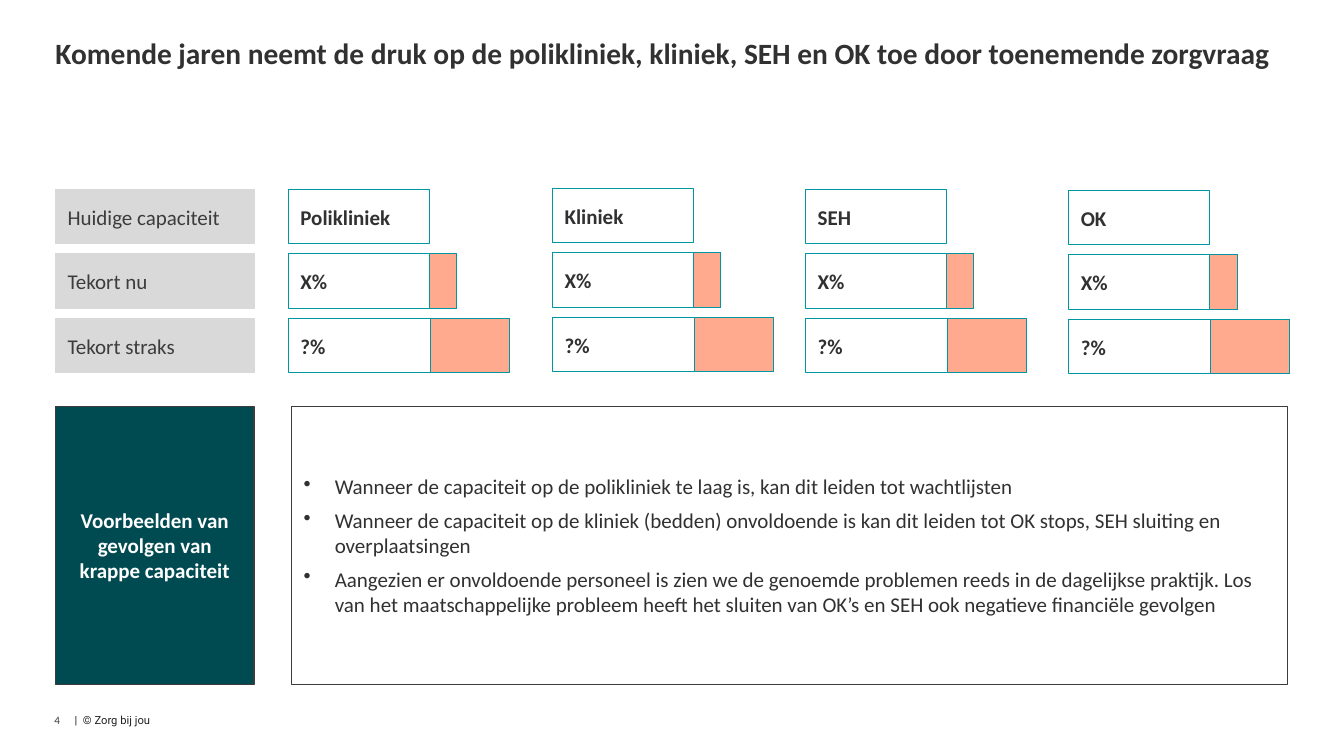
from lxml import etree
from pptx import Presentation
from pptx.dml.color import RGBColor
from pptx.enum.shapes import MSO_SHAPE
from pptx.enum.text import MSO_ANCHOR, PP_ALIGN
from pptx.oxml.ns import qn
from pptx.util import Inches, Pt

RECTANGLE = MSO_SHAPE.RECTANGLE
MIDDLE = MSO_ANCHOR.MIDDLE
LEFT, CENTER = PP_ALIGN.LEFT, PP_ALIGN.CENTER

INK = RGBColor(0x31, 0x31, 0x31)
GRAPHITE = RGBColor(0x3C, 0x3C, 0x3C)
FOOTER_INK = RGBColor(0x20, 0x21, 0x24)
WHITE = RGBColor(0xFF, 0xFF, 0xFF)
GREY = RGBColor(0xD9, 0xD9, 0xD9)
DARK_TEAL = RGBColor(0x00, 0x4B, 0x51)
TEAL = RGBColor(0x00, 0x96, 0xA1)
SALMON = RGBColor(0xFF, 0xAA, 0x8F)

TITLE = ("Komende jaren neemt de druk op de polikliniek, kliniek, SEH en OK "
         "toe door toenemende zorgvraag")
ROW_LABELS = ["Huidige capaciteit", "Tekort nu", "Tekort straks"]
# Department, left, top
DEPARTMENTS = [
    ("Polikliniek", 2.86, 1.88),
    ("Kliniek", 5.48, 1.87),
    ("SEH", 7.99, 1.88),
    ("OK", 10.6, 1.89),
]
# Label, bar width, width of the shortage at its right end
SHORTAGES = [("X%", 1.67, 0.27), ("?%", 2.19, 0.78)]
EXAMPLES_LABEL = "Voorbeelden van gevolgen van krappe capaciteit"
EXAMPLES = [
    "Wanneer de capaciteit op de polikliniek te laag is, kan dit leiden tot "
    "wachtlijsten",
    "Wanneer de capaciteit op de kliniek (bedden) onvoldoende is kan dit "
    "leiden tot OK stops, SEH sluiting en overplaatsingen",
    "Aangezien er onvoldoende personeel is zien we de genoemde problemen "
    "reeds in de dagelijkse praktijk. Los van het maatschappelijke probleem "
    "heeft het sluiten van OK’s en SEH ook negatieve financiële gevolgen",
]
PAGE_NUMBER = "4"
COPYRIGHT = "|  © Zorg bij jou"

MARGIN = 0.55
LABEL_WIDTH = 1.97
ROWS_TOP, ROW_HEIGHT, ROW_STEP = 1.88, 0.54, 0.64
CAPACITY_WIDTH = 1.4
EXAMPLES_LEFT, EXAMPLES_TOP = 2.89, 4.03
EXAMPLES_WIDTH, EXAMPLES_HEIGHT = 9.88, 2.76
BULLET_INDENT = 0.31


def set_font(paragraph, size, color, bold=False, name="Calibri"):
    font = paragraph.font
    font.name, font.size, font.bold = name, Pt(size), bold
    font.color.rgb = color


def set_insets(frame, side):
    frame.margin_left = frame.margin_right = Inches(side)
    frame.margin_top = frame.margin_bottom = 0


def add_text(slide, text, left, top, width, height, size, color, **style):
    box = slide.shapes.add_textbox(
        Inches(left), Inches(top), Inches(width), Inches(height))
    frame = box.text_frame
    frame.word_wrap = True
    set_insets(frame, 0)
    frame.text = text
    set_font(frame.paragraphs[0], size, color, **style)


def add_box(slide, left, top, width, height, line, fill=None, texts=(),
            color=INK, bold=False, align=LEFT):
    """Add a rectangle with one paragraph per text and return its paragraphs."""
    shape = slide.shapes.add_shape(
        RECTANGLE, Inches(left), Inches(top), Inches(width), Inches(height))
    shape.shadow.inherit = False
    shape.line.color.rgb = line
    shape.line.width = Pt(0.75)
    if fill is None:
        shape.fill.background()
    else:
        shape.fill.solid()
        shape.fill.fore_color.rgb = fill
    frame = shape.text_frame
    frame.word_wrap = True
    frame.vertical_anchor = MIDDLE
    set_insets(frame, 0.12)
    frame.text = "\n".join(texts)
    for paragraph in frame.paragraphs:
        paragraph.alignment = align
        set_font(paragraph, 15, color, bold)
    return frame.paragraphs


def add_bullets(paragraphs):
    for index, paragraph in enumerate(paragraphs):
        if index:
            paragraph.space_before = Pt(6)
        properties = paragraph._p.get_or_add_pPr()
        properties.set("marL", str(Inches(BULLET_INDENT)))
        properties.set("indent", str(-Inches(BULLET_INDENT)))
        bullet = etree.Element(qn("a:buChar"), char="•")
        properties.find(qn("a:defRPr")).addprevious(bullet)


def add_department(slide, name, left, top):
    add_box(slide, left, top, CAPACITY_WIDTH, ROW_HEIGHT, TEAL,
            texts=[name], bold=True)
    for row, (label, width, shortage) in enumerate(SHORTAGES, start=1):
        row_top = top + row * ROW_STEP
        add_box(slide, left, row_top, width, ROW_HEIGHT, TEAL,
                texts=[label], bold=True)
        add_box(slide, left + width - shortage, row_top, shortage, ROW_HEIGHT,
                TEAL, SALMON)


def main():
    presentation = Presentation()
    presentation.slide_width = Inches(13.33)
    presentation.slide_height = Inches(7.5)
    slide = presentation.slides.add_slide(presentation.slide_layouts[6])

    add_text(slide, TITLE, MARGIN, 0.35, 12.24, 0.37, 21, INK, bold=True)
    for row, label in enumerate(ROW_LABELS):
        add_box(slide, MARGIN, ROWS_TOP + row * ROW_STEP, LABEL_WIDTH,
                ROW_HEIGHT, GREY, GREY, [label], GRAPHITE)
    for name, left, top in DEPARTMENTS:
        add_department(slide, name, left, top)

    add_box(slide, MARGIN, EXAMPLES_TOP, LABEL_WIDTH, EXAMPLES_HEIGHT,
            GRAPHITE, DARK_TEAL, [EXAMPLES_LABEL], WHITE, True, CENTER)
    add_bullets(add_box(slide, EXAMPLES_LEFT, EXAMPLES_TOP, EXAMPLES_WIDTH,
                        EXAMPLES_HEIGHT, GRAPHITE, texts=EXAMPLES))

    add_text(slide, PAGE_NUMBER, 0.54, 7.08, 0.2, 0.13, 8, GRAPHITE)
    add_text(slide, COPYRIGHT, 0.74, 7.08, 5.86, 0.13, 8, FOOTER_INK,
             name="Roboto")
    presentation.save("out.pptx")


if __name__ == "__main__":
    main()
